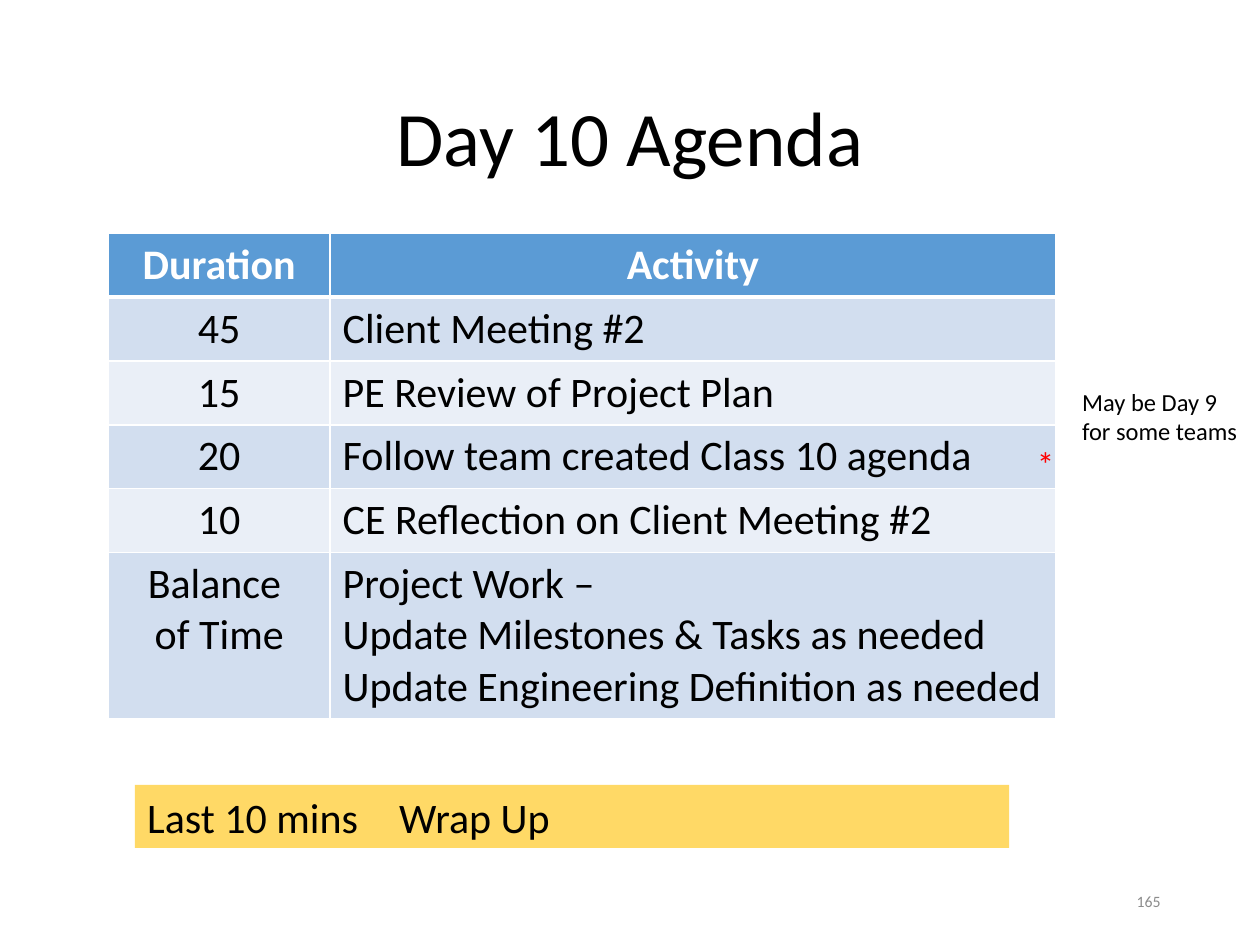
from dataclasses import dataclass
from lxml.etree import SubElement
from pptx import Presentation
from pptx.dml.color import RGBColor as RGB
from pptx.enum.shapes import MSO_SHAPE as SHAPE
from pptx.enum.text import MSO_ANCHOR as ANCHOR, PP_ALIGN as ALIGN
from pptx.oxml.ns import qn
from pptx.util import Inches, Pt


@dataclass(frozen=True)
class Theme:
    font: str = "Calibri"
    ink: str = "000000"
    white: str = "FFFFFF"
    grey: str = "8C8C8C"
    red: str = "FF0000"
    header: str = "5B9BD5"
    bands: tuple = ("D2DEEF", "EAEFF7")
    wrap_up: str = "FFD966"
    title: int = 44
    body: int = 24
    mark: int = 20
    note: int = 14
    number: int = 9


T = Theme()
WIDTH, HEIGHT = 10, 7.5
AGENDA = [
    ("Duration", "Activity"),
    ("45", "Client Meeting #2"),
    ("15", "PE Review of Project Plan"),
    ("20", "Follow team created Class 10 agenda"),
    ("10", "CE Reflection on Client Meeting #2"),
    ("Balance \nof Time",
     "Project Work –\nUpdate Milestones & Tasks as needed\n"
     "Update Engineering Definition as needed"),
]
COLUMNS = (1.76, 5.76)
ROW, LAST_ROW = 0.5, 1.31
TABLE_LEFT, TABLE_TOP = 0.86, 1.85
MARGIN = 0.69
WRAP_TAB = 4

LABELS = [
    ("Day 10 Agenda", (MARGIN, 0.4, WIDTH - 2 * MARGIN, 1.45),
     T.title, T.ink, ALIGN.CENTER, ANCHOR.MIDDLE),
    ("165", (WIDTH - MARGIN - 2.25, 6.95, 2.25, 0.4),
     T.number, T.grey, ALIGN.RIGHT, ANCHOR.MIDDLE),
    ("May be Day 9 for some teams", (8.49, 3.02, 1.5, 0.57),
     T.note, T.ink, ALIGN.LEFT, ANCHOR.TOP),
    ("*", (8.13, 3.46, 0.42, 0.44),
     T.mark, T.red, ALIGN.LEFT, ANCHOR.TOP),
]


def write(tf, text, size, color, align, bold=False):
    tf.text = text
    for p in tf.paragraphs:
        p.alignment = align
        for r in p.runs:
            r.font.name = T.font
            r.font.size = Pt(size)
            r.font.bold = bold
            r.font.color.rgb = RGB.from_string(color)


def paint(target, color):
    target.fill.solid()
    target.fill.fore_color.rgb = RGB.from_string(color)


def add_label(s, text, box, size, color, align, anchor):
    tf = s.shapes.add_textbox(*map(Inches, box)).text_frame
    tf.word_wrap = True
    tf.vertical_anchor = anchor
    write(tf, text, size, color, align)
    return tf


def add_borders(cell, widths):
    tc_pr = cell._tc.get_or_add_tcPr()
    for side, width in widths.items():
        ln = SubElement(tc_pr, qn(f"a:ln{side}"), w=str(Pt(width)))
        SubElement(SubElement(ln, qn("a:solidFill")), qn("a:srgbClr"), val=T.white)


def add_agenda(s):
    heights = [ROW] * (len(AGENDA) - 1) + [LAST_ROW]
    box = (TABLE_LEFT, TABLE_TOP, sum(COLUMNS), sum(heights))
    table = s.shapes.add_table(len(AGENDA), len(COLUMNS), *map(Inches, box)).table
    table.horz_banding = False
    for column, width in zip(table.columns, COLUMNS):
        column.width = Inches(width)
    for i, (row, height) in enumerate(zip(AGENDA, heights)):
        table.rows[i].height = Inches(height)
        is_header = i == 0
        fill = T.header if is_header else T.bands[(i - 1) % 2]
        for j, text in enumerate(row):
            cell = table.cell(i, j)
            align = ALIGN.CENTER if is_header or j == 0 else ALIGN.LEFT
            write(cell.text_frame, text, T.body,
                  T.white if is_header else T.ink, align, is_header)
            add_borders(cell, {"L": 1, "R": 1, "T": 3 if i == 1 else 1,
                               "B": 3 if is_header else 1})
            paint(cell, fill)


def add_wrap_up(s):
    bar = s.shapes.add_shape(SHAPE.RECTANGLE, *map(Inches, (1.07, 6.23, 6.94, 0.5)))
    bar.shadow.inherit = False
    paint(bar, T.wrap_up)
    bar.line.fill.background()
    tf = bar.text_frame
    tf.word_wrap = True
    tf.vertical_anchor = ANCHOR.TOP
    p_pr = tf.paragraphs[0]._p.get_or_add_pPr()
    tabs = SubElement(p_pr, qn("a:tabLst"))
    SubElement(tabs, qn("a:tab"), pos=str(Inches(WRAP_TAB)), algn="l")
    write(tf, "Last 10 mins\tWrap Up", T.body, T.ink, ALIGN.LEFT)


def main():
    prs = Presentation()
    prs.slide_width, prs.slide_height = Inches(WIDTH), Inches(HEIGHT)
    s = prs.slides.add_slide(prs.slide_layouts[6])
    add_agenda(s)
    for label in LABELS:
        tf = add_label(s, *label)
        if label[2] == T.title:
            tf.paragraphs[0].line_spacing = 0.9
    add_wrap_up(s)
    prs.save("out.pptx")


if __name__ == "__main__":
    main()
